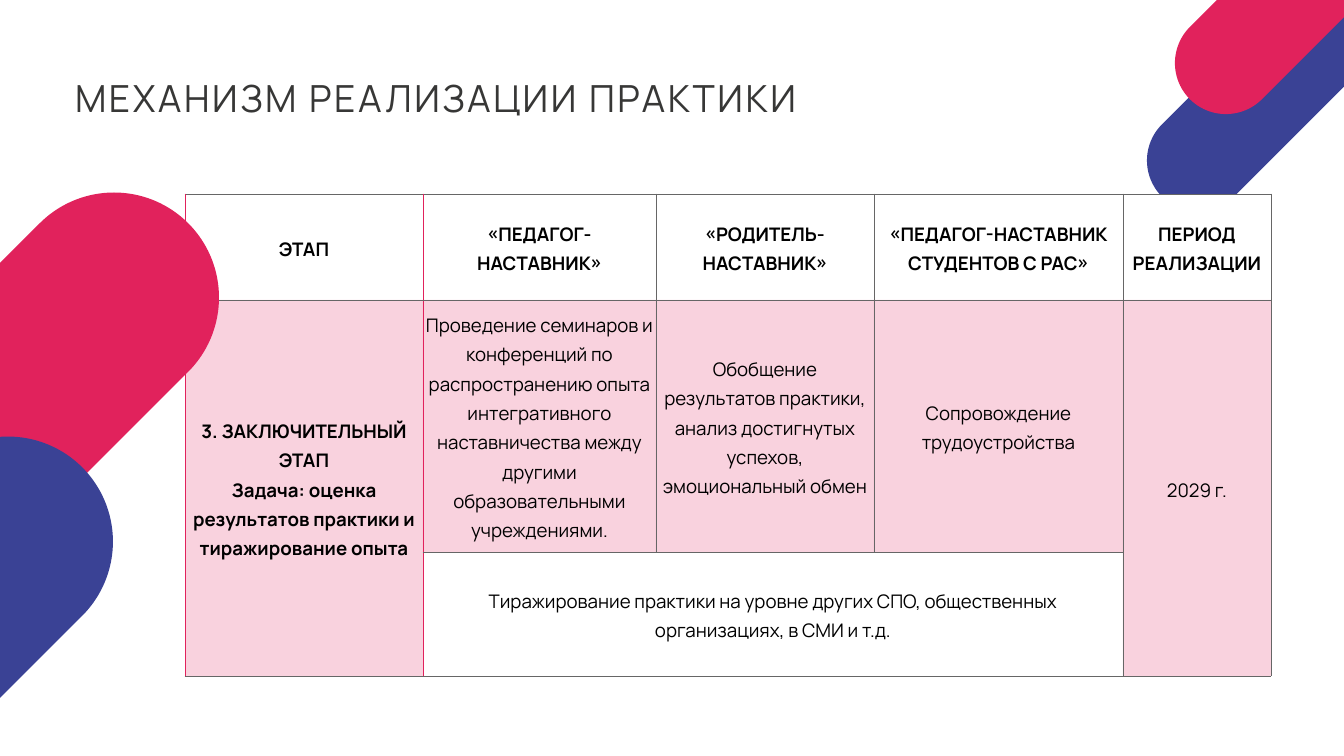
import dataclasses

import pptx
import pptx.dml.color
import pptx.enum.shapes
import pptx.enum.text
import pptx.oxml
import pptx.oxml.ns
import pptx.util

SCALE = 12192000 / 896


@dataclasses.dataclass(frozen=True)
class Theme:
    pink: str = "E1225C"
    blue: str = "3A4295"
    white: str = "FFFFFF"
    title: str = "373736"
    text: str = "000000"
    grid: str = "666666"
    tint: int = 20
    font: str = "Manrope"
    title_size: int = 40
    title_leading: int = 48
    title_tracking: int = 280
    body_size: int = 20
    body_leading: float = 1.15
    border: int = 1


THEME = Theme()

COLUMNS = [238, 233, 218, 249, 148]
ROWS = [106, 252, 124]
HEADERS = ["ЭТАП", "«ПЕДАГОГ-НАСТАВНИК»", "«РОДИТЕЛЬ-НАСТАВНИК»",
           "«ПЕДАГОГ-НАСТАВНИК СТУДЕНТОВ С РАС»", "ПЕРИОД РЕАЛИЗАЦИИ"]
STAGE = ["3. ЗАКЛЮЧИТЕЛЬНЫЙ ЭТАП",
         "Задача: оценка результатов практики и тиражирование опыта"]
ACTIONS = [
    "Проведение семинаров и конференций по распространению опыта "
    "интегративного наставничества между другими образовательными учреждениями.",
    "Обобщение результатов практики, анализ достигнутых успехов, эмоциональный обмен",
    "Сопровождение трудоустройства",
    "2029 г.",
]
OUTCOME = ("Тиражирование практики на уровне других СПО, "
           "общественных организациях, в СМИ и т.д.")


def px(n):
    return pptx.util.Emu(round(n * SCALE))


def rgb(color):
    return pptx.dml.color.RGBColor.from_string(color)


def add_run(p, text, size, color, bold=False):
    r = p.add_run()
    r.text = text
    r.font.name = THEME.font
    r.font.size = pptx.util.Pt(size)
    r.font.bold = bold
    r.font.color.rgb = rgb(color)
    return r


def add_capsules(s, box, capsules):
    x, y = box
    group = s.shapes.add_group_shape()
    for dx, dy, w, h, color in capsules:
        sp = group.shapes.add_shape(pptx.enum.shapes.MSO_SHAPE.ROUNDED_RECTANGLE,
                                    px(x + dx), px(y + dy), px(w), px(h))
        sp.adjustments[0] = 0.5
        sp.rotation = 315
        sp.shadow.inherit = False
        sp.fill.solid()
        sp.fill.fore_color.rgb = rgb(color)
        sp.line.fill.background()


def add_title(s, box, text):
    tf = s.shapes.add_textbox(*map(px, box)).text_frame
    tf.word_wrap = True
    tf.margin_left = tf.margin_top = tf.margin_right = tf.margin_bottom = 0
    p = tf.paragraphs[0]
    p.line_spacing = pptx.util.Pt(THEME.title_leading)
    r = add_run(p, text, THEME.title_size, THEME.title)
    r.font._element.set("spc", str(THEME.title_tracking))


def set_borders(cell, colors):
    tcPr = cell._tc.get_or_add_tcPr()
    for i, (side, color) in enumerate(zip("LRTB", colors)):
        tcPr.insert(i, pptx.oxml.parse_xml(
            f'<a:ln{side} {pptx.oxml.ns.nsdecls("a")} w="{pptx.util.Pt(THEME.border)}">'
            f'<a:solidFill><a:srgbClr val="{color}"/></a:solidFill></a:ln{side}>'))


def fill_cell(cell, color, opacity=100):
    cell.fill.solid()
    cell.fill.fore_color.rgb = rgb(color)
    if opacity < 100:
        clr = cell._tc.tcPr.find(".//" + pptx.oxml.ns.qn("a:srgbClr"))
        alpha = pptx.oxml.parse_xml(
            f'<a:alpha {pptx.oxml.ns.nsdecls("a")} val="{opacity * 1000}"/>')
        clr.append(alpha)


def write_cell(cell, paragraphs, bold=False):
    tf = cell.text_frame
    for i, text in enumerate(paragraphs):
        p = tf.add_paragraph() if i else tf.paragraphs[0]
        p.alignment = pptx.enum.text.PP_ALIGN.CENTER
        p.line_spacing = THEME.body_leading
        add_run(p, text, THEME.body_size, THEME.text, bold)


def add_stage_table(s, box):
    x, y = box
    table = s.shapes.add_table(len(ROWS), len(COLUMNS), px(x), px(y),
                               px(sum(COLUMNS)), px(sum(ROWS))).table
    table.first_row = table.horz_banding = False
    for column, w in zip(table.columns, COLUMNS):
        column.width = px(w)
    for row, h in zip(table.rows, ROWS):
        row.height = px(h)

    last = len(COLUMNS) - 1
    for row in range(len(ROWS)):
        for col in range(len(COLUMNS)):
            cell = table.cell(row, col)
            cell.vertical_anchor = pptx.enum.text.MSO_ANCHOR.MIDDLE
            if row:
                cell.margin_left = cell.margin_right = px(2)
                cell.margin_top = cell.margin_bottom = px(2)
            if row == 1 or (row == 2 and col in (0, last)):
                fill_cell(cell, THEME.pink, THEME.tint)
            elif row == 0:
                fill_cell(cell, THEME.white)
            else:
                cell.fill.background()
            left = THEME.pink if col < 2 else THEME.grid
            right = THEME.pink if col == 0 else THEME.grid
            set_borders(cell, [left, right, THEME.grid, THEME.grid])

    for col in (0, last):
        table.cell(1, col).merge(table.cell(2, col))
    table.cell(2, 1).merge(table.cell(2, last - 1))

    for col, text in enumerate(HEADERS):
        write_cell(table.cell(0, col), [text], bold=True)
    write_cell(table.cell(1, 0), STAGE, bold=True)
    for col, text in enumerate(ACTIONS, start=1):
        write_cell(table.cell(1, col), [text])
    write_cell(table.cell(2, 1), [OUTCOME])


def main():
    prs = pptx.Presentation()
    prs.slide_width, prs.slide_height = px(1344), px(756)
    s = prs.slides.add_slide(prs.slide_layouts[6])
    add_capsules(s, (1124, -36), [(0, 90, 259, 102, THEME.blue),
                                  (31, 0, 238, 102, THEME.pink)])
    add_title(s, (75, 75, 787, 45), "МЕХАНИЗМ РЕАЛИЗАЦИИ ПРАКТИКИ")
    add_stage_table(s, (185, 194))
    add_capsules(s, (-482, 335), [(147, 0, 613, 210, THEME.pink),
                                  (0, 261, 661, 210, THEME.blue)])
    prs.save("out.pptx")


if __name__ == "__main__":
    main()
